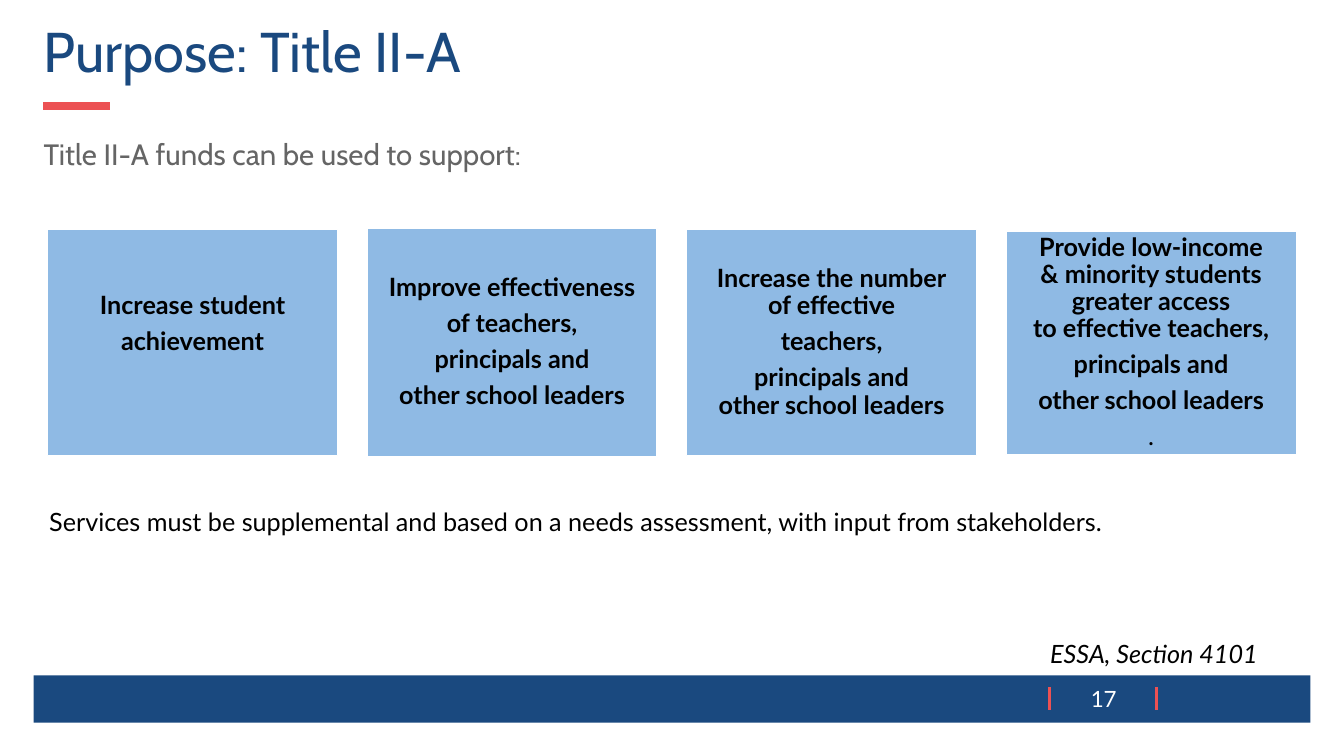
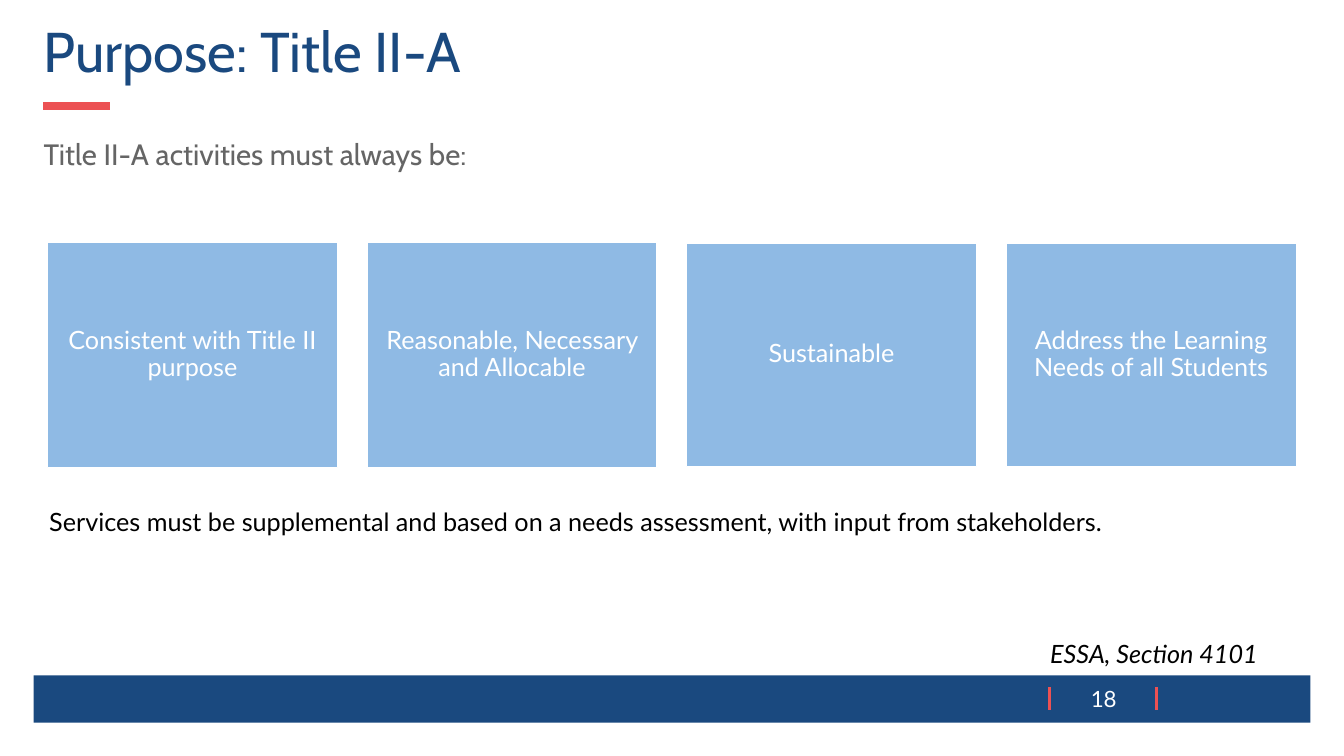
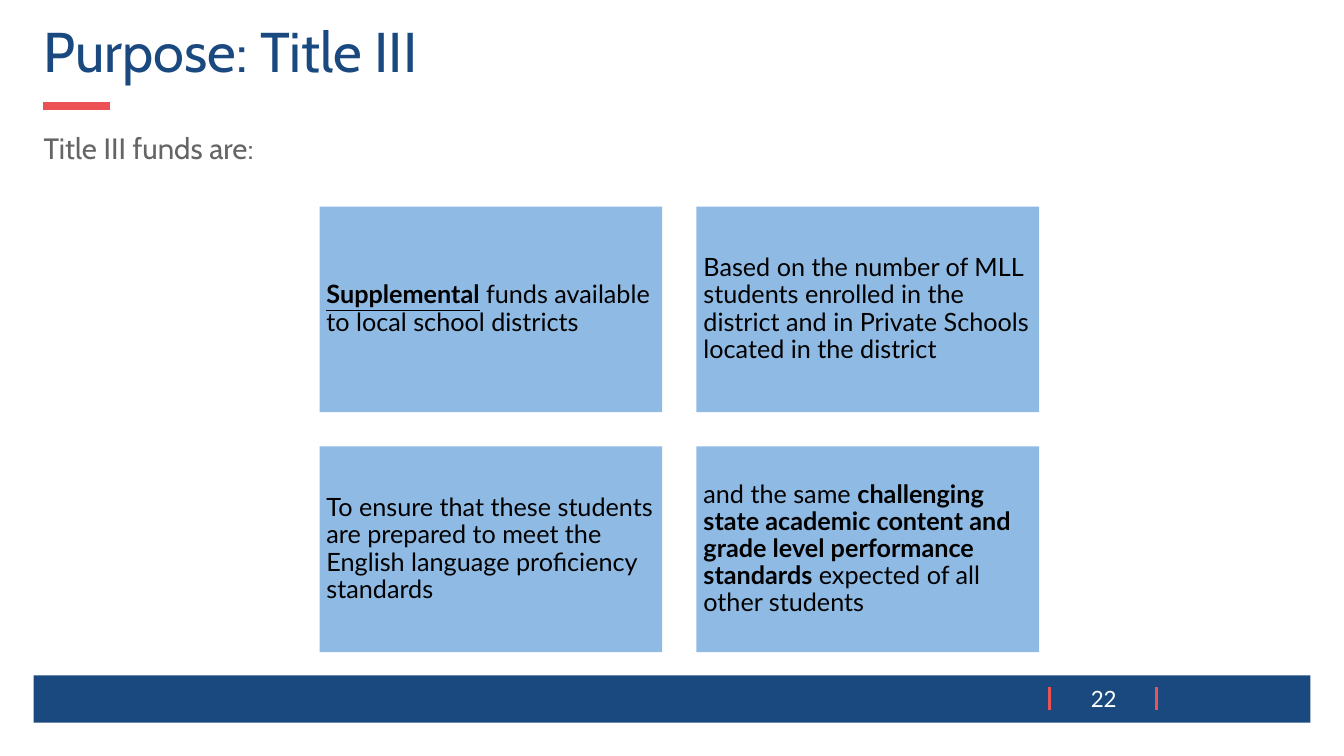
import pptx
import pptx.util
import pptx.dml.color
import pptx.enum.shapes
import pptx.enum.text
import pptx.oxml.ns
import lxml.etree

Pt = pptx.util.Pt
ALIGN = pptx.enum.text.PP_ALIGN
ANCHOR = pptx.enum.text.MSO_ANCHOR
RECTANGLE = pptx.enum.shapes.MSO_SHAPE.RECTANGLE
STRAIGHT = pptx.enum.shapes.MSO_CONNECTOR.STRAIGHT

COLORS = {
    "navy": "1A497F",
    "red": "EC5153",
    "sky": "8FBAE4",
    "gray": "656565",
    "black": "000000",
    "white": "FFFFFF",
}
COLORS = {name: pptx.dml.color.RGBColor.from_string(code) for name, code in COLORS.items()}

TITLE = {"name": "Cabin", "size": Pt(40), "color": "navy"}
LEAD = {"name": "Cabin", "size": Pt(21), "color": "gray"}
BODY = {"name": "Lato", "size": Pt(18), "color": "black"}
NUMBER = {"name": "Lato", "size": Pt(16), "color": "white"}
BOLD = {"bold": True}
PLAIN = {"bold": False}


def write(frame, paragraphs, style, layout=None, **frame_format):
    """Fill a frame; a paragraph is a string or a list of (text, style) runs."""
    frame.word_wrap = True
    for key, value in frame_format.items():
        setattr(frame, key, value)
    for index, content in enumerate(paragraphs):
        paragraph = frame.add_paragraph() if index else frame.paragraphs[0]
        for key, value in (layout or {}).items():
            setattr(paragraph, key, value)
        runs = [(content, {})] if isinstance(content, str) else content
        for text, extra in runs:
            for row, line in enumerate(text.split("\n")):
                if row:
                    paragraph.add_line_break()
                run = paragraph.add_run()
                run.text = line
                for key, value in {**style, **extra}.items():
                    if key == "color":
                        run.font.color.rgb = COLORS[value]
                    else:
                        setattr(run.font, key, value)


def add_box(slide, left, top, width, height, color, outline=None):
    box = slide.shapes.add_shape(RECTANGLE, Pt(left), Pt(top), Pt(width), Pt(height))
    box.shadow.inherit = False
    box.fill.solid()
    box.fill.fore_color.rgb = COLORS[color]
    if outline:
        box.line.color.rgb = COLORS[outline]
        box.line.width = Pt(1)
    else:
        box.line.fill.background()
    return box


# Content
SERVICES = ("Services must be supplemental and based on a needs assessment, "
            "with input from stakeholders.")
CITATION = "ESSA, Section 4101"

ROW = {"columns": 4, "left": 33.84, "step_x": 228.24, "step_y": 0,
       "width": 207.36, "outline": "white", "align": ALIGN.CENTER}
GRID = {"columns": 2, "left": 228.24, "step_x": 269.28, "step_y": 171.36,
        "width": 244.8, "outline": None, "align": ALIGN.LEFT}

SLIDES = [
    {
        "title": "Purpose: Title II-A",
        "lead": "Title II-A funds can be used to support:",
        "lead_top": 87.84,
        "number": "17",
        "notes": True,
        "grid": ROW,
        "middle": 244.8,
        "heights": [161.28, 163.44, 161.28, 159.84],
        "card_style": {**BODY, **BOLD},
        "first_bottom": 31,
        "cards": [
            ["Increase student", "achievement"],
            ["Improve effectiveness", "of teachers,", "principals and",
             "other school leaders"],
            ["Increase the number\nof effective", "teachers,",
             "principals and\nother school leaders"],
            ["Provide low-income\n& minority students\ngreater access\nto effective teachers,",
             "principals and", "other school leaders", [(".", PLAIN)]],
        ],
    },
    {
        "title": "Purpose: Title II-A",
        "lead": "Title II-A activities must always be:",
        "lead_top": 87.84,
        "number": "18",
        "notes": True,
        "grid": ROW,
        "middle": 253.44,
        "heights": [161.28, 161.28, 159.84, 159.84],
        "card_style": {**BODY, "color": "white"},
        "first_bottom": 5,
        "cards": [
            ["Consistent with Title II purpose"],
            ["Reasonable, Necessary and Allocable"],
            ["Sustainable"],
            ["Address the Learning Needs of all Students"],
        ],
    },
    {
        "title": "Purpose: Title III",
        "lead": "Title III funds are:",
        "lead_top": 83.52,
        "number": "22",
        "notes": False,
        "grid": GRID,
        "middle": 221.04,
        "heights": [146.88] * 4,
        "card_style": BODY,
        "first_bottom": 5,
        "cards": [
            [[("Supplemental", {"bold": True, "underline": True}),
              (" funds available to local school districts", {})]],
            ["Based on the number of MLL students enrolled in the district "
             "and in Private Schools located in the district"],
            ["To ensure that these students are prepared to meet the "
             "English language proficiency standards"],
            [[("and the same ", {}),
              ("challenging state academic content and grade level performance standards", BOLD),
              (" expected of all other students", {})]],
        ],
    },
]

deck = pptx.Presentation()
deck.slide_width, deck.slide_height = Pt(960), Pt(540)
title_only = deck.slide_layouts[5]
slides = [deck.slides.add_slide(title_only) for content in SLIDES]

# Shared decoration: drawn once, then moved to the layout
for placeholder in list(title_only.placeholders)[1:]:
    title_only.shapes.element.remove(placeholder.element)

decoration = [add_box(slides[0], 24, 482.4, 912, 33.84, "navy")]
for x1, y1, x2, y2, weight in [
    (30.96, 75.6, 78.48, 75.6, 6),
    (749.52, 491.04, 749.52, 506.88, 2.25),
    (825.84, 491.04, 825.84, 506.88, 2.25),
]:
    rule = slides[0].shapes.add_connector(STRAIGHT, Pt(x1), Pt(y1), Pt(x2), Pt(y2))
    rule.line.color.rgb = COLORS["red"]
    rule.line.width = Pt(weight)
    lxml.etree.SubElement(rule.element.spPr, pptx.oxml.ns.qn("a:effectLst"))
    decoration.append(rule)
for part in decoration:
    title_only.shapes.element.append(part.element)

for slide, content in zip(slides, SLIDES):
    # Title
    title = slide.shapes.title
    title.left, title.top, title.width, title.height = Pt(24), Pt(13.68), Pt(912), Pt(55.44)
    write(title.text_frame, [content["title"]], TITLE,
          {"alignment": ALIGN.LEFT, "line_spacing": 0.9}, vertical_anchor=ANCHOR.TOP)

    # Lead sentence
    lead = slide.shapes.add_textbox(Pt(24), Pt(content["lead_top"]), Pt(912), Pt(48))
    write(lead.text_frame, [content["lead"]], LEAD, {"line_spacing": 1.23})

    # Cards
    grid = content["grid"]
    for index, (card_text, height) in enumerate(zip(content["cards"], content["heights"])):
        row, column = divmod(index, grid["columns"])
        card = add_box(slide, grid["left"] + column * grid["step_x"],
                       content["middle"] + row * grid["step_y"] - height / 2,
                       grid["width"], height, "sky", grid["outline"])
        write(card.text_frame, card_text, content["card_style"],
              {"alignment": grid["align"], "line_spacing": 0.9, "space_after": Pt(6.3)},
              vertical_anchor=ANCHOR.MIDDLE, margin_left=Pt(5), margin_right=Pt(5),
              margin_top=Pt(5), margin_bottom=Pt(5 if index else content["first_bottom"]))

    # Closing sentence and citation
    if content["notes"]:
        services = slide.shapes.add_textbox(Pt(28.08), Pt(357.84), Pt(903.6), Pt(58.32))
        write(services.text_frame, [SERVICES], BODY)
        citation = slide.shapes.add_textbox(Pt(743.04), Pt(452.16), Pt(200), Pt(29.52))
        write(citation.text_frame, [CITATION], {**BODY, "italic": True})

    # Slide number
    number = slide.shapes.add_textbox(Pt(765.36), Pt(486), Pt(46.08), Pt(26.64))
    write(number.text_frame, [content["number"]], NUMBER,
          {"alignment": ALIGN.CENTER}, vertical_anchor=ANCHOR.MIDDLE)

deck.save("out.pptx")
